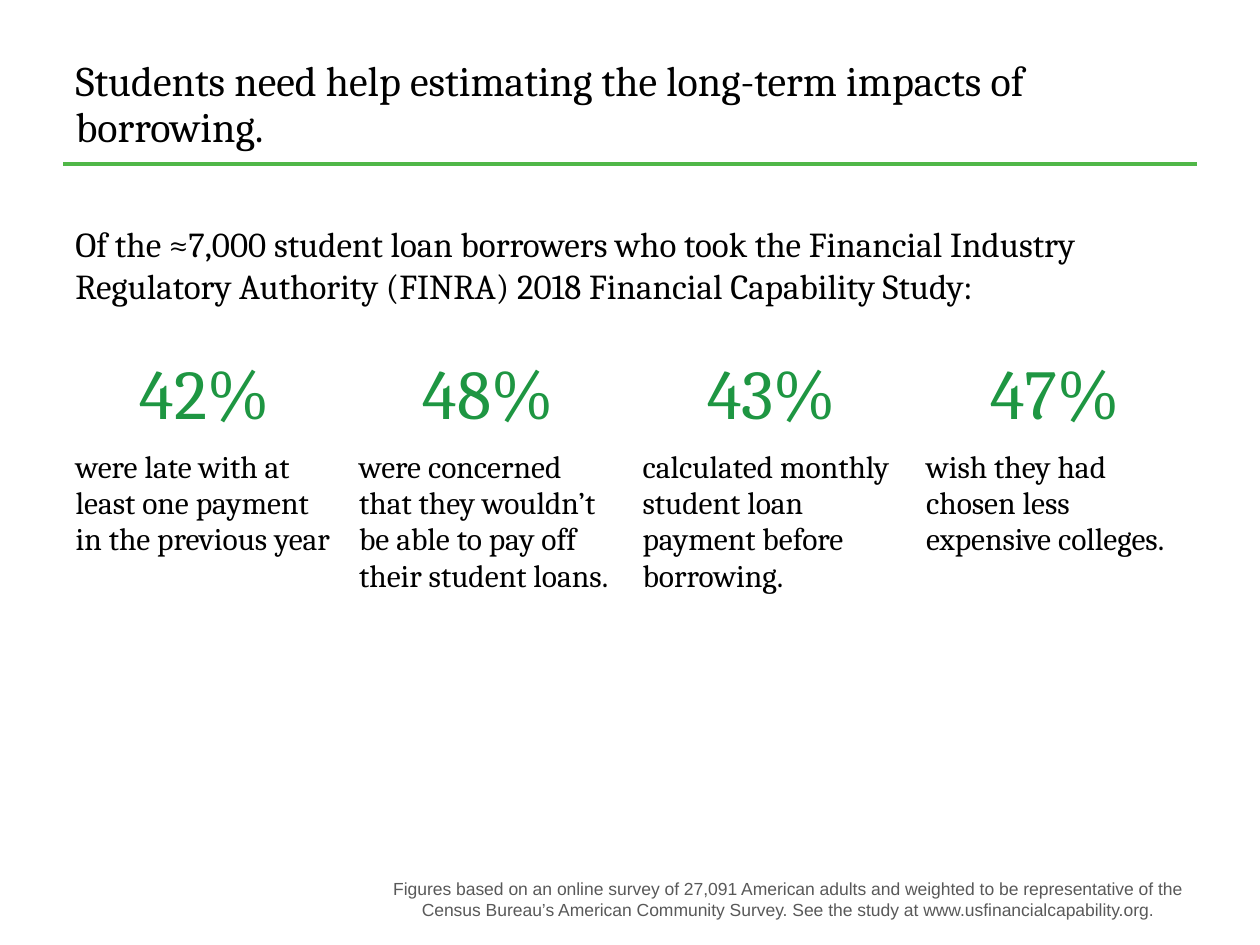
from dataclasses import dataclass

from lxml.etree import SubElement
from pptx import Presentation
from pptx.dml.color import RGBColor
from pptx.enum.shapes import MSO_CONNECTOR
from pptx.enum.text import MSO_ANCHOR as Anchor, MSO_AUTO_SIZE as AutoSize, PP_ALIGN as Align
from pptx.oxml.ns import qn
from pptx.util import Inches, Pt

BLACK, GREY, GREEN, RULE_GREEN = "000000", "595959", "1E9642", "50B748"
LEFT, WIDTH = 0.5, 9


@dataclass
class Finding:
    share: str
    meaning: str


FINDINGS = [
    Finding("42%", "were late with at least one payment in the previous year"),
    Finding("48%", "were concerned that they wouldn’t be able to pay off their student loans."),
    Finding("43%", "calculated monthly student loan payment before borrowing."),
    Finding("47%", "wish they had chosen less expensive colleges."),
]


def color(hex_code: str) -> RGBColor:
    return RGBColor.from_string(hex_code)


def write(frame, text: str, *, size: float, font: str = "Cambria", ink: str = BLACK,
          align=Align.LEFT, spacing: float = 1.0) -> None:
    """Put one formatted paragraph in a text frame."""
    frame.word_wrap = True
    paragraph = frame.paragraphs[0]
    paragraph.alignment = align
    paragraph.line_spacing = spacing
    run = paragraph.add_run()
    run.text = text
    run.font.size = Pt(size)
    run.font.name = font
    run.font.bold = False
    run.font.color.rgb = color(ink)


def set_frame(frame, anchor, top: float, bottom: float) -> None:
    frame.auto_size = AutoSize.NONE
    frame.vertical_anchor = anchor
    frame.margin_left = frame.margin_right = Inches(0.1)
    frame.margin_top, frame.margin_bottom = Inches(top), Inches(bottom)


def add_rule(slide, y: float) -> None:
    rule = slide.shapes.add_connector(
        MSO_CONNECTOR.STRAIGHT, Inches(LEFT), Inches(y), Inches(LEFT + WIDTH), Inches(y))
    rule.line.color.rgb = color(RULE_GREEN)
    rule.line.width = Pt(2)
    SubElement(rule._element.spPr, qn("a:effectLst"))


def add_findings(slide, findings: list[Finding], top: float, height: float) -> None:
    holder = slide.shapes.add_table(
        2, len(findings), Inches(LEFT), Inches(top), Inches(WIDTH), Inches(height))
    table = holder.table
    table.first_row = table.horz_banding = False
    for row in table.rows:
        row.height = Inches(0.41)  # rows grow with their text
    holder.height = Inches(height)
    for column, finding in enumerate(findings):
        share, meaning = table.cell(0, column), table.cell(1, column)
        write(share.text_frame, finding.share, size=40, ink=GREEN, align=Align.CENTER)
        write(meaning.text_frame, finding.meaning, size=18)
        for cell in (share, meaning):
            cell.fill.background()


def main() -> None:
    deck = Presentation()
    deck.slide_width, deck.slide_height = Inches(10), Inches(7.5)
    slide = deck.slides.add_slide(deck.slide_layouts[5])

    # Title and the rule below it
    add_rule(slide, 1.3)
    title = slide.shapes.title
    title.left, title.top = Inches(LEFT), Inches(0.3)
    title.width, title.height = Inches(WIDTH), Inches(1)
    set_frame(title.text_frame, Anchor.BOTTOM, 0.1, 0.1)
    write(title.text_frame, "Students need help estimating the long-term impacts of borrowing.",
          size=24, spacing=0.9)

    # Survey note
    note = slide.shapes.add_textbox(Inches(3), Inches(6.92), Inches(6.5), Inches(0.38))
    set_frame(note.text_frame, Anchor.BOTTOM, 0.05, 0)
    write(note.text_frame,
          "Figures based on an online survey of 27,091 American adults and weighted to be "
          "representative of the Census Bureau’s American Community Survey. "
          "See the study at www.usfinancialcapability.org.",
          size=10, font="Arial", ink=GREY, align=Align.CENTER)

    # Findings under their introduction
    add_findings(slide, FINDINGS, top=2.78, height=2.67)
    intro = slide.shapes.add_textbox(Inches(LEFT), Inches(1.72), Inches(WIDTH), Inches(0.77))
    set_frame(intro.text_frame, Anchor.TOP, 0.05, 0.05)
    intro.text_frame.auto_size = AutoSize.SHAPE_TO_FIT_TEXT
    write(intro.text_frame,
          "Of the ≈7,000 student loan borrowers who took the Financial Industry "
          "Regulatory Authority (FINRA) 2018 Financial Capability Study:", size=20)

    deck.save("out.pptx")


if __name__ == "__main__":
    main()
